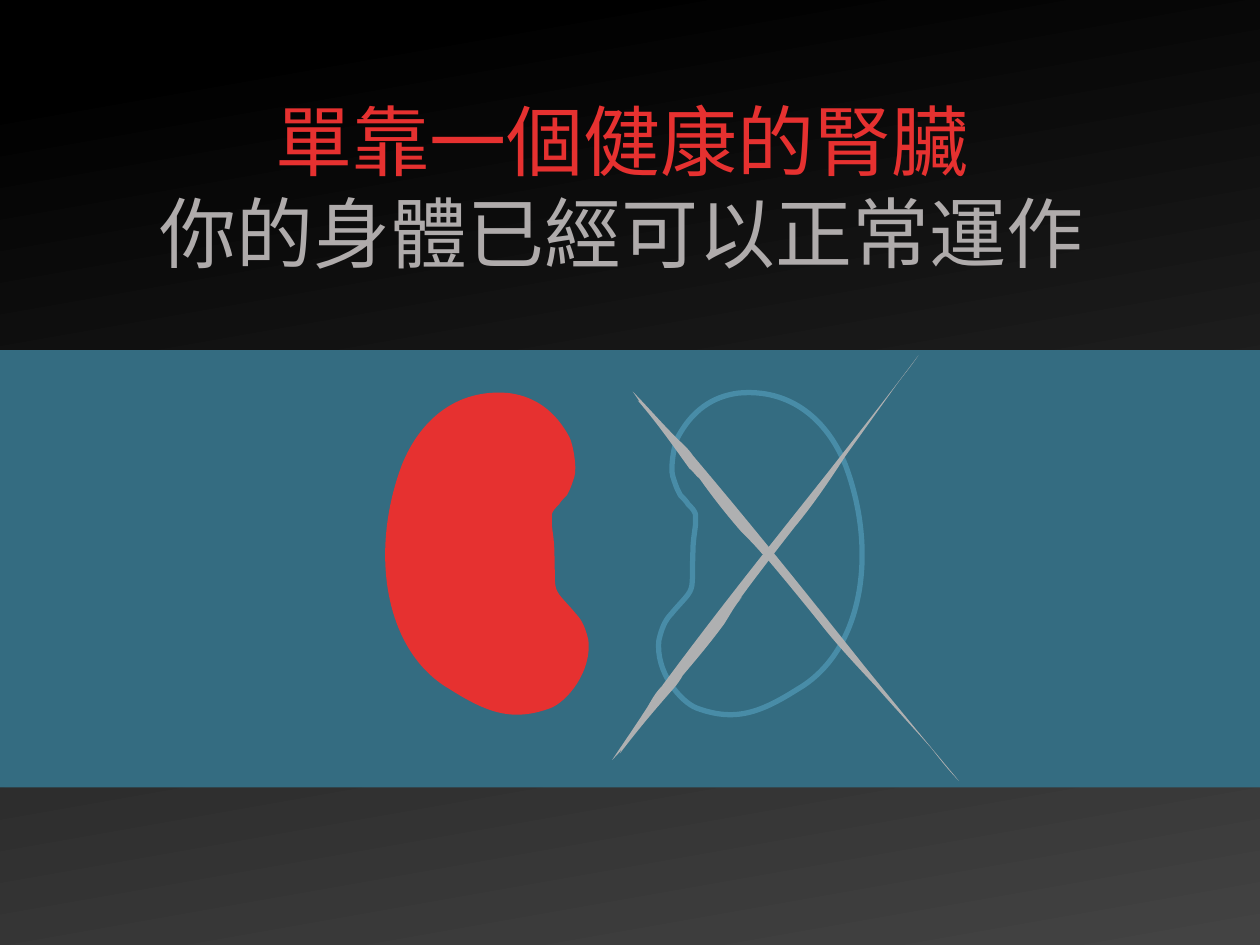
import math

from lxml import etree
from pptx import Presentation
from pptx import util as u
from pptx.dml import color as dml
from pptx.enum import shapes, text
from pptx.oxml import ns

HUES = {"red": "E63130", "pale": "AFABAB", "band": "346C81", "edge": "488CA7",
        "cross": "AFB0B1", "dark": "000000", "gray": "434343"}

# Outlines in inches: a start point, then two handles and an end for each curve
KIDNEY = [
    (4.4, 4.37),
    (4.4, 4.3), (4.39, 4.25), (4.38, 4.17),
    (4.38, 4.14), (4.38, 4.11), (4.38, 4.08),
    (4.39, 4.05), (4.41, 4.03), (4.44, 4),
    (4.45, 3.98), (4.48, 3.95), (4.5, 3.93),
    (4.51, 3.91), (4.53, 3.88), (4.56, 3.78),
    (4.58, 3.71), (4.55, 3.53), (4.52, 3.47),
    (4.38, 3.21), (4.19, 3.14), (4.04, 3.12),
    (3.62, 3.08), (3.33, 3.34), (3.19, 3.69),
    (2.93, 4.38), (3.05, 5.17), (3.57, 5.47),
    (3.87, 5.66), (4.07, 5.73), (4.37, 5.62),
    (4.5, 5.57), (4.7, 5.33), (4.67, 5.08),
    (4.65, 4.99), (4.62, 4.92), (4.57, 4.87),
    (4.53, 4.82), (4.47, 4.76), (4.44, 4.72),
    (4.39, 4.65), (4.41, 4.62), (4.4, 4.37),
]
MIRROR = 9.9  # the two kidneys' x values add up to this

# Strokes of the cross: turn in degrees, centre, outline as it lies on the slide
STROKES = [
    (18.3, (6.31, 4.65), [
        (5.37, 3.48),
        (5.41, 3.52), (5.46, 3.56), (5.5, 3.62),
        (5.99, 4.2), (6.4, 4.71), (6.86, 5.29),
        (7.12, 5.61), (7.35, 5.89), (7.61, 6.2),
        (7.53, 6.12), (7.46, 6.03), (7.39, 5.94),
        (7.24, 5.77), (7.1, 5.62), (6.95, 5.45),
        (6.81, 5.3), (6.64, 5.12), (6.5, 4.94),
        (6.13, 4.48), (5.96, 4.29), (6.05, 4.4),
        (5.99, 4.33), (5.94, 4.28), (5.88, 4.22),
        (5.75, 4.07), (5.65, 3.94), (5.55, 3.8),
        (5.53, 3.79), (5.49, 3.73), (5.47, 3.72),
        (5.34, 3.54), (5.23, 3.38), (5.06, 3.18),
        (5.08, 3.19), (5.09, 3.21), (5.09, 3.21),
        (5.06, 3.17), (5.05, 3.15), (5.02, 3.11),
        (5.12, 3.21), (5.25, 3.36), (5.37, 3.48)]),
    (275.3, (6.08, 4.43), [
        (5.14, 5.62),
        (5.17, 5.57), (5.2, 5.51), (5.25, 5.46),
        (5.7, 4.85), (6.11, 4.34), (6.57, 3.76),
        (6.82, 3.44), (7.05, 3.15), (7.29, 2.83),
        (7.23, 2.92), (7.16, 3), (7.09, 3.1),
        (6.96, 3.28), (6.84, 3.45), (6.71, 3.63),
        (6.6, 3.8), (6.46, 4.01), (6.31, 4.19),
        (5.95, 4.65), (5.8, 4.86), (5.89, 4.75),
        (5.83, 4.82), (5.8, 4.88), (5.75, 4.96),
        (5.64, 5.11), (5.53, 5.24), (5.42, 5.37),
        (5.41, 5.39), (5.37, 5.45), (5.35, 5.47),
        (5.21, 5.63), (5.08, 5.78), (4.92, 5.99),
        (4.93, 5.97), (4.94, 5.95), (4.94, 5.95),
        (4.91, 5.99), (4.9, 6), (4.86, 6.04),
        (4.94, 5.92), (5.05, 5.76), (5.14, 5.62)]),
]


def tint(name):
    return dml.RGBColor.from_string(HUES[name])


def put(para, words, hue="pale", size=44, font="Arial"):
    run = para.add_run()
    run.text = words
    run.font.name, run.font.size = font, u.Pt(size)
    run.font.color.rgb = tint(hue)


def spin(dots, mid, turn):
    """Turn points about a centre, clockwise in degrees."""
    c, s = math.cos(math.radians(turn)), math.sin(math.radians(turn))
    a, b = mid
    return [(a + (x - a) * c - (y - b) * s, b + (x - a) * s + (y - b) * c)
            for x, y in dots]


def bend(shape):
    """Make each three line segments of an outline one cubic curve."""
    legs = list(shape.element.iter(ns.qn("a:lnTo")))
    for i in range(0, len(legs), 3):
        curve = etree.Element(ns.qn("a:cubicBezTo"))
        legs[i].addprevious(curve)
        for leg in legs[i:i + 3]:
            curve.append(leg[0])
            leg.getparent().remove(leg)


class Deck:
    def __init__(self):
        self.show = Presentation()
        self.show.slide_width, self.show.slide_height = u.Inches(10), u.Inches(7.5)
        self.page = self.show.slides.add_slide(self.show.slide_layouts[5])

    def ground(self, stops, angle):
        fill = self.page.background.fill
        fill.gradient()
        fill.gradient_angle = angle
        for stop, (place, hue) in zip(fill.gradient_stops, stops):
            stop.position, stop.color.rgb = place, tint(hue)

    def title(self, lines, box):
        head = self.page.shapes.title
        head.left, head.top, head.width, head.height = map(u.Inches, box)
        frame = head.text_frame
        frame.word_wrap = True
        frame.auto_size = text.MSO_AUTO_SIZE.SHAPE_TO_FIT_TEXT
        frame.vertical_anchor = text.MSO_ANCHOR.TOP
        para = frame.paragraphs[0]
        para.alignment = text.PP_ALIGN.CENTER
        for i, (words, hue) in enumerate(lines):
            if i:
                para.add_line_break()
            put(para, words, hue=hue)

    def paint(self, shape, fill=None, line=None, width=3):
        shape.shadow.inherit = False
        if fill:
            shape.fill.solid()
            shape.fill.fore_color.rgb = tint(fill)
        else:
            shape.fill.background()
        if line:
            shape.line.color.rgb, shape.line.width = tint(line), u.Pt(width)
        else:
            shape.line.fill.background()

    def rect(self, box, **look):
        kind = shapes.MSO_SHAPE.RECTANGLE
        self.paint(self.page.shapes.add_shape(kind, *map(u.Inches, box)), **look)

    def free(self, dots, home=None, turn=0, **look):
        home = home or self.page.shapes
        dots = [(u.Inches(x), u.Inches(y)) for x, y in dots]
        pen = home.build_freeform(*dots[0])
        pen.add_line_segments(dots[1:], close=True)
        shape = pen.convert_to_shape()
        bend(shape)
        shape.rotation = turn
        self.paint(shape, **look)


def main():
    deck = Deck()
    deck.ground([(0.08, "dark"), (1, "gray")], angle=280)
    deck.title([("單靠一個健康的腎臟", "red"), ("你的身體已經可以正常運作", "pale")],
               (0.13, 0.69, 9.62, 1.58))
    deck.rect((0, 2.78, 10, 3.47), fill="band")

    # Pair of kidneys: one solid, one mirrored outline
    pair = deck.page.shapes.add_group_shape().shapes
    deck.free(KIDNEY, pair, fill="red")
    deck.free([(MIRROR - x, y) for x, y in KIDNEY], pair, line="edge")

    # Cross over the missing kidney
    for turn, mid, dots in STROKES:
        deck.free(spin(dots, mid, -turn), turn=turn, fill="cross")

    deck.show.save("out.pptx")


if __name__ == "__main__":
    main()
